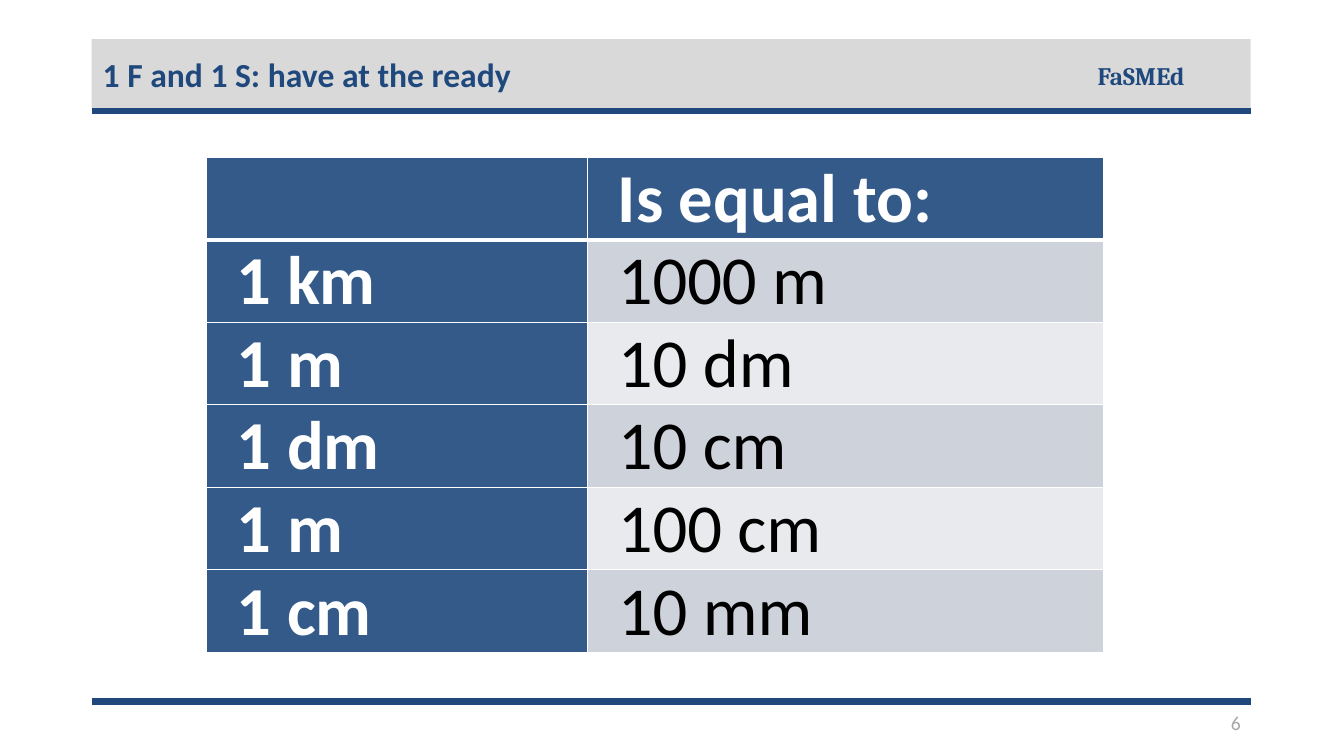
"""Build the slide with the table of equal lengths."""
import pptx
import pptx.util
import pptx.dml.color
import pptx.enum.shapes
import pptx.enum.text
import pptx.oxml
from pptx.oxml.ns import nsdecls

Cm, Pt = pptx.util.Cm, pptx.util.Pt
ALIGN = pptx.enum.text.PP_ALIGN
ANCHOR = pptx.enum.text.MSO_ANCHOR

COLORS = {
    "navy": "1F497D", "blue": "345A8A", "band": "D9D9D9", "gray": "A6A6A6",
    "dark": "CED2DA", "pale": "E8EAED", "white": "FFFFFF", "black": "000000",
}

ROWS = [
    ("", "Is equal to:"),
    ("1 km", "1000 m"),
    ("1 m", "10 dm"),
    ("1 dm", "10 cm"),
    ("1 m", "100 cm"),
    ("1 cm", "10 mm"),
]

LEFT, WIDTH = 2.31, 29.21
BAND = (LEFT, 0.99, WIDTH, 1.75)
RULES = [2.79, 17.68]
GRID = (5.21, 3.96)
COLS = [9.6, 13.01]
ROW = 2.08
INSET = 0.76

TEXTS = [
    ("1 F and 1 S: have at the ready", (2.34, 1.04, WIDTH, 1.8),
     {"name": "Calibri", "size": Pt(24), "bold": True}, "navy",
     {"alignment": ALIGN.LEFT, "line_spacing": 0.9}, ANCHOR.MIDDLE),
    ("FaSMEd", (27.41, 1.4, 2.82, 1.02),
     {"name": "Cambria", "size": Pt(18), "bold": True}, "navy",
     {"alignment": ALIGN.LEFT}, ANCHOR.TOP),
    ("6", (26.52, 17.78, 5, 0.86),
     {"name": "Calibri", "size": Pt(14), "bold": False}, "gray",
     {"alignment": ALIGN.RIGHT}, ANCHOR.MIDDLE),
]


def rgb(name):
    return pptx.dml.color.RGBColor.from_string(COLORS[name])


def apply(target, values):
    for key, value in values.items():
        setattr(target, key, value)


def paint(shape, name):
    shape.fill.solid()
    shape.fill.fore_color.rgb = rgb(name)


def style(para, font, color):
    apply(para.font, font)
    para.font.color.rgb = rgb(color)


def add_band(slide):
    band = slide.shapes.add_shape(
        pptx.enum.shapes.MSO_SHAPE.RECTANGLE, *map(Cm, BAND))
    band.shadow.inherit = False
    paint(band, "band")
    band.line.fill.background()


def add_rule(slide, top):
    rule = slide.shapes.add_connector(
        pptx.enum.shapes.MSO_CONNECTOR.STRAIGHT,
        Cm(LEFT), Cm(top), Cm(LEFT + WIDTH), Cm(top))
    rule.line.color.rgb = rgb("navy")
    rule.line.width = Pt(4.5)
    rule._element.spPr.append(
        pptx.oxml.parse_xml(f"<a:effectLst {nsdecls('a')}/>"))


def add_text(slide, text, place, font, color, form, anchor):
    frame = slide.shapes.add_textbox(*map(Cm, place)).text_frame
    apply(frame, {"word_wrap": True, "vertical_anchor": anchor, "text": text})
    para = frame.paragraphs[0]
    apply(para, form)
    style(para, font, color)


def add_edges(cell, thick):
    for side in "LRTB":
        width = Pt(thick.get(side, 1))
        cell._tc.get_or_add_tcPr().append(pptx.oxml.parse_xml(
            f'<a:ln{side} {nsdecls("a")} w="{width}"><a:solidFill>'
            f'<a:srgbClr val="{COLORS["white"]}"/></a:solidFill></a:ln{side}>'))


def add_grid(slide):
    table = slide.shapes.add_table(
        len(ROWS), len(COLS), *map(Cm, GRID),
        Cm(sum(COLS)), Cm(ROW * len(ROWS))).table
    for col, width in zip(table.columns, COLS):
        col.width = Cm(width)
    for r, row in enumerate(ROWS):
        table.rows[r].height = Cm(ROW)
        for c, text in enumerate(row):
            cell = table.cell(r, c)
            head = r == 0 or c == 0
            add_edges(cell, {0: {"B": 3}, 1: {"T": 3}}.get(r, {}))
            paint(cell, "blue" if head else "dark" if r % 2 else "pale")
            apply(cell, {"margin_left": Cm(INSET), "margin_right": Cm(INSET),
                         "margin_top": 0, "margin_bottom": 0})
            if text:
                cell.text = text
                style(cell.text_frame.paragraphs[0],
                      {"name": "Calibri", "size": Pt(49), "bold": head},
                      "white" if head else "black")


def main():
    deck = pptx.Presentation()
    apply(deck, {"slide_width": Cm(33.87), "slide_height": Cm(19.05)})
    slide = deck.slides.add_slide(deck.slide_layouts[6])
    add_band(slide)
    for top in RULES:
        add_rule(slide, top)
    for item in TEXTS:
        add_text(slide, *item)
    add_grid(slide)
    deck.save("out.pptx")


if __name__ == "__main__":
    main()
